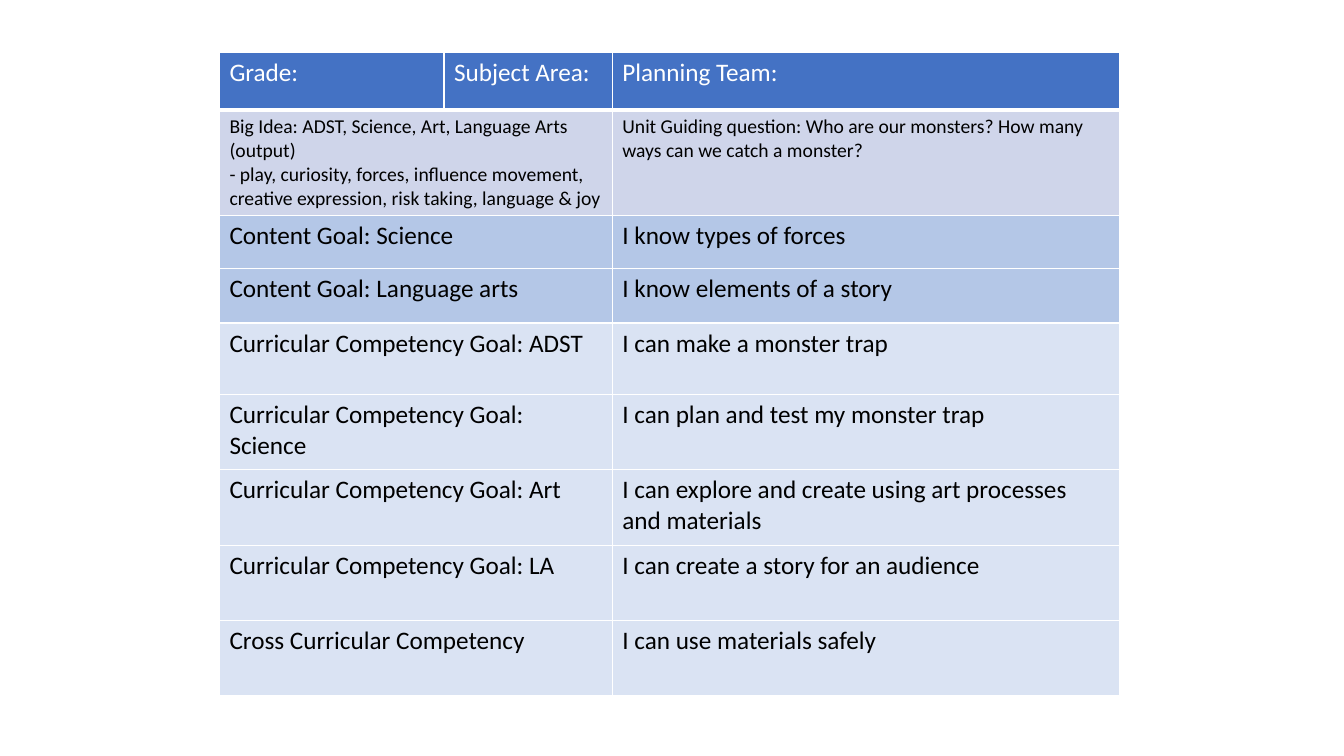
from dataclasses import dataclass

from lxml import etree
from pptx import Presentation
from pptx import util as u
from pptx.dml.color import RGBColor
from pptx.oxml import ns
from pptx.table import Table, _Cell


@dataclass(frozen=True)
class Theme:
    font: str = "Calibri"
    body: int = 18
    small: int = 14
    white: str = "FFFFFF"
    black: str = "000000"
    header: str = "4472C4"
    idea: str = "CFD5EA"
    content: str = "B4C7E7"
    competency: str = "DAE3F3"
    thin: int = 1
    thick: int = 3


THEME = Theme()


@dataclass(frozen=True)
class PlanRow:
    height: float
    fill: str
    goal: str
    statement: str
    size: int = THEME.body


HEADER_HEIGHT = 1.46
HEADINGS = ("Grade:", "Subject Area:", "Planning Team:")
COLUMN_WIDTHS = (5.66, 4.24, 12.78)
PLAN = (
    PlanRow(2.65, THEME.idea,
            "Big Idea: ADST, Science, Art, Language Arts (output)\n"
            "- play, curiosity, forces, influence movement, "
            "creative expression, risk taking, language & joy",
            "Unit Guiding question: Who are our monsters? "
            "How many ways can we catch a monster?", THEME.small),
    PlanRow(1.33, THEME.content, "Content Goal: Science", "I know types of forces"),
    PlanRow(1.38, THEME.content, "Content Goal: Language arts", "I know elements of a story"),
    PlanRow(1.8, THEME.competency, "Curricular Competency Goal: ADST",
            "I can make a monster trap"),
    PlanRow(1.9, THEME.competency, "Curricular Competency Goal: Science",
            "I can plan and test my monster trap"),
    PlanRow(1.9, THEME.competency, "Curricular Competency Goal: Art",
            "I can explore and create using art processes and materials"),
    PlanRow(1.9, THEME.competency, "Curricular Competency Goal: LA",
            "I can create a story for an audience"),
    PlanRow(1.9, THEME.competency, "Cross Curricular Competency",
            "I can use materials safely"),
)


def set_borders(cell: _Cell, bottom: int) -> None:
    """Draw white edges; only the bottom one may differ in width (points)."""
    properties = cell._tc.get_or_add_tcPr()
    for side in "LRTB":
        width = bottom if side == "B" else THEME.thin
        line = etree.SubElement(properties, ns.qn(f"a:ln{side}"), w=str(u.Pt(width)))
        solid = etree.SubElement(line, ns.qn("a:solidFill"))
        etree.SubElement(solid, ns.qn("a:srgbClr"), val=THEME.white)


def style_cell(cell: _Cell, fill: str, bottom: int = THEME.thin) -> None:
    set_borders(cell, bottom)
    cell.fill.solid()
    cell.fill.fore_color.rgb = RGBColor.from_string(fill)


def write_text(cell: _Cell, words: str, size: int, color: str) -> None:
    """Write each line of words as its own paragraph."""
    frame = cell.text_frame
    for index, line in enumerate(words.split("\n")):
        para = frame.add_paragraph() if index else frame.paragraphs[0]
        span = para.add_run()
        span.text = line
        span.font.name = THEME.font
        span.font.size = u.Pt(size)
        span.font.bold = False
        span.font.color.rgb = RGBColor.from_string(color)


def fill_header(table: Table) -> None:
    table.rows[0].height = u.Cm(HEADER_HEIGHT)
    for column, heading in enumerate(HEADINGS):
        cell = table.cell(0, column)
        style_cell(cell, THEME.header, THEME.thick)
        write_text(cell, heading, THEME.body, THEME.white)


def fill_plan_row(table: Table, index: int, row: PlanRow) -> None:
    """Fill one row, its goal spanning the first two columns."""
    table.rows[index].height = u.Cm(row.height)
    goal, covered, statement = (table.cell(index, column) for column in range(3))
    goal.merge(covered)
    for cell in (goal, covered, statement):
        style_cell(cell, row.fill)
    write_text(goal, row.goal, row.size, THEME.black)
    write_text(statement, row.statement, row.size, THEME.black)


def main() -> None:
    deck = Presentation()
    deck.slide_width, deck.slide_height = u.Cm(33.87), u.Cm(19.05)
    page = deck.slides.add_slide(deck.slide_layouts[6])
    height = HEADER_HEIGHT + sum(row.height for row in PLAN)
    table = page.shapes.add_table(
        len(PLAN) + 1, len(COLUMN_WIDTHS), u.Cm(5.53), u.Cm(1.31),
        u.Cm(sum(COLUMN_WIDTHS)), u.Cm(height)).table
    for column, width in zip(table.columns, COLUMN_WIDTHS):
        column.width = u.Cm(width)
    fill_header(table)
    for index, row in enumerate(PLAN, start=1):
        fill_plan_row(table, index, row)
    deck.save("out.pptx")


if __name__ == "__main__":
    main()
